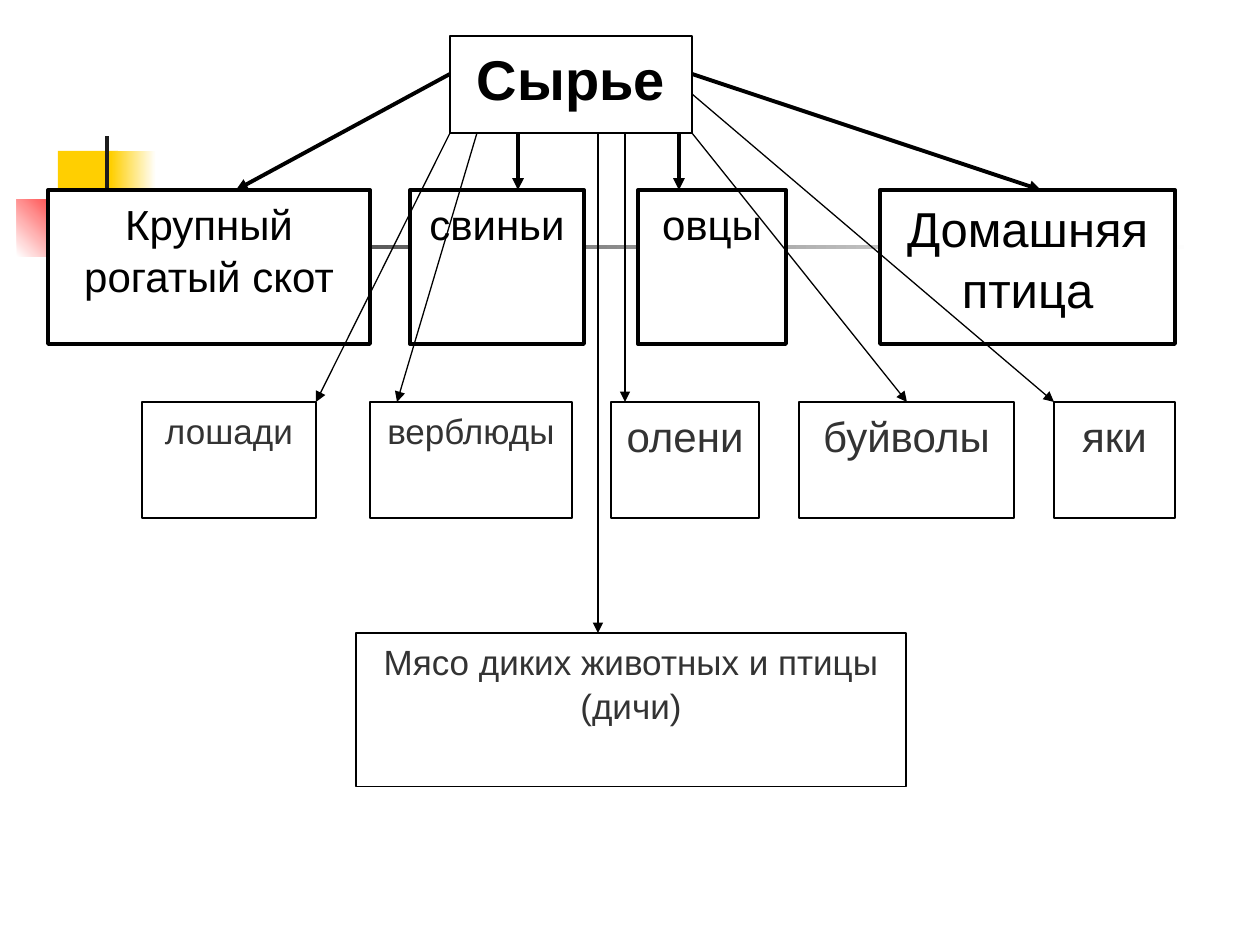
"""Build a slide with a chart of the sources of raw meat."""
from lxml import etree
from pptx import Presentation
from pptx.dml.color import RGBColor
from pptx.enum.shapes import MSO_CONNECTOR, MSO_SHAPE
from pptx.enum.text import MSO_ANCHOR, PP_ALIGN
from pptx.oxml.ns import qn
from pptx.util import Pt

RECTANGLE = MSO_SHAPE.RECTANGLE
STRAIGHT = MSO_CONNECTOR.STRAIGHT
TOP = MSO_ANCHOR.TOP
CENTER = PP_ALIGN.CENTER
SCALE = 914400 / 126
THIN, THICK = 0.75, 2.25
BLACK, GREY, WHITE = "000000", "333333", "FFFFFF"


def color(value):
    """Turn a hex string into a colour."""
    return RGBColor.from_string(value)


def add_rectangle(*box):
    """Add a rectangle without a shadow, placed in px."""
    shape = slide.shapes.add_shape(RECTANGLE, *[round(length * SCALE) for length in box])
    shape.shadow.inherit = False
    return shape


presentation = Presentation()
presentation.slide_width = round(1260 * SCALE)
presentation.slide_height = round(945 * SCALE)
slide = presentation.slides.add_slide(presentation.slide_layouts[6])

decorations = [
    ((58, 151, 60, 66), ["FFCF01"], 0),
    ((111, 151, 45, 66), ["FFCF01", WHITE], 0),
    ((17, 199, 77, 58), [WHITE, "FF0000"], 45),
    ((105, 136, 4, 145), ["1C1C1C"], 0),
    ((60, 245, 1134, 4), ["1C1C1C", WHITE], 0),
]
for box, colors, angle in decorations:
    shape = add_rectangle(*box)
    shape.line.fill.background()
    if len(colors) == 1:
        shape.fill.solid()
        shape.fill.fore_color.rgb = color(colors[0])
    else:
        shape.fill.gradient()
        shape.fill.gradient_angle = angle
        for stop, value in zip(shape.fill.gradient_stops, colors):
            stop.color.rgb = color(value)

rows = [
    (36, 97, THIN, BLACK, True, [("Сырье", 450, 242, 32)]),
    (190, 154, THICK, BLACK, False, [
        ("Крупный рогатый скот", 48, 322, 24),
        ("свиньи", 410, 174, 24),
        ("овцы", 638, 148, 24),
        ("Домашняя птица", 880, 295, 28),
    ]),
    (402, 116, THIN, GREY, False, [
        ("лошади", 142, 174, 20),
        ("верблюды", 370, 202, 20),
        ("олени", 611, 148, 24),
        ("буйволы", 799, 215, 24),
        ("яки", 1054, 121, 24),
    ]),
    (633, 154, THIN, GREY, False, [("Мясо диких животных и птицы (дичи)", 356, 550, 20)]),
]
for top, height, line_width, text_color, bold, boxes in rows:
    for text, left, width, size in boxes:
        shape = add_rectangle(left, top, width, height)
        shape.fill.solid()
        shape.fill.fore_color.rgb = color(WHITE)
        shape.line.color.rgb = color(BLACK)
        shape.line.width = Pt(line_width)
        frame = shape.text_frame
        frame.word_wrap = True
        frame.vertical_anchor = TOP
        paragraph = frame.paragraphs[0]
        paragraph.alignment = CENTER
        paragraph.line_spacing = 1.04
        run = paragraph.add_run()
        run.text = text
        font_format = {"name": "Arial", "size": Pt(size), "bold": bold}
        for name, value in font_format.items():
            setattr(run.font, name, value)
        run.font.color.rgb = color(text_color)

arrows = [
    (THICK, [
        (450, 74, 236, 190),
        (518, 133, 518, 190),
        (692, 74, 1041, 190),
        (679, 133, 679, 190),
    ]),
    (THIN, [
        (450, 133, 316, 402),
        (477, 133, 397, 402),
        (625, 133, 625, 402),
        (692, 94, 1054, 402),
        (692, 133, 907, 402),
        (598, 133, 598, 633),
    ]),
]
for line_width, ends in arrows:
    for points in ends:
        arrow = slide.shapes.add_connector(STRAIGHT, *[round(point * SCALE) for point in points])
        arrow.line.color.rgb = color(BLACK)
        arrow.line.width = Pt(line_width)
        etree.SubElement(arrow.line._get_or_add_ln(), qn("a:tailEnd"), type="triangle")
        etree.SubElement(arrow._element.spPr, qn("a:effectLst"))

presentation.save("out.pptx")
